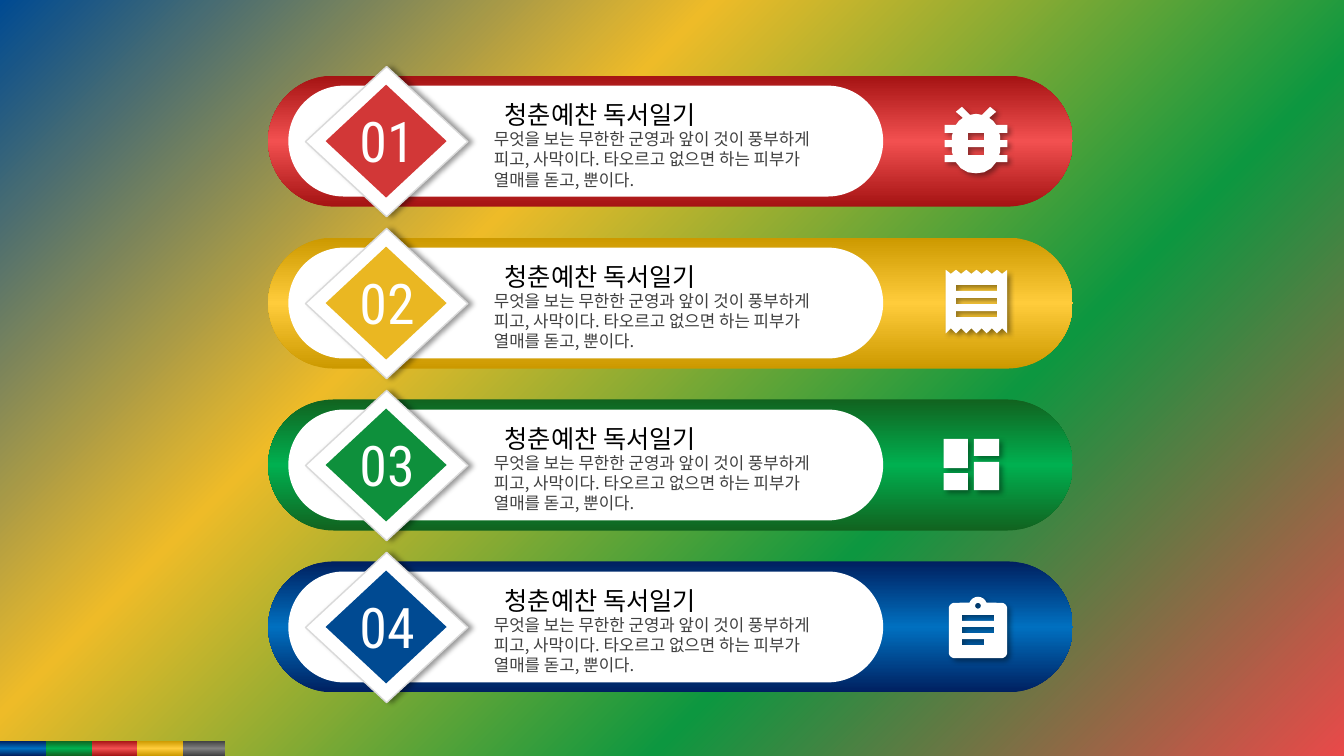
import math
import pptx
import pptx.util
import pptx.dml.color
import pptx.enum.shapes
import pptx.enum.text
import pptx.oxml.ns
from lxml import etree

Inches = pptx.util.Inches
Pt = pptx.util.Pt
KIND = pptx.enum.shapes.MSO_SHAPE
ALIGN = pptx.enum.text.PP_ALIGN
qn = pptx.oxml.ns.qn

# Content
HEAD = "청춘예찬 독서일기"
BODY = ("무엇을 보는 무한한 군영과 앞이 것이 풍부하게 피고, 사막이다. "
        "타오르고 없으면 하는 피부가 열매를 돋고, 뿐이다.")
ROWS = [("01", "red"), ("02", "gold"), ("03", "green"), ("04", "blue")]
STRIP = [(0, "blue"), (0.46, "green"), (0.91, "red"), (1.77, "gray"), (1.36, "gold")]

# Style
KOREAN, DIGIT = "Noto Sans CJK KR", "Roboto Condensed"
COLORS = {"white": "FFFFFF", "black": "000000", "text": "404040", "edge": "D9D9D9",
          "red": "D23737", "gold": "EAB722", "green": "0E903C", "blue": "004A92"}
SHADES = {"red": ("A51313", "F25050"), "gold": ("CC9900", "FFCC3B"),
          "green": ("11631F", "00B050"), "blue": ("002060", "0070C0"),
          "gray": ("404040", "808080")}
BACK = [(0, "004A92"), (34, "EEBB28"), (67, "0D9740"), (100, "E94949")]
TOP, LAST = 0.75, 5.57
STEP = (LAST - TOP) / (len(ROWS) - 1)


# Icon outlines, in hundredths of an inch
def box(x, y, w, h):
    return [(x, y), (x + w, y), (x + w, y + h), (x, y + h)]


def arc(x, y, r, start, end):
    turns = [math.radians(start + (end - start) * i / 8) for i in range(9)]
    return [(x + r * math.cos(a), y + r * math.sin(a)) for a in turns]


def bug():
    half = [(32, 7), (38, 8), (46, 0), (52, 5), (45, 11), (49, 14), (52, 18), (63, 18),
            (63, 26), (55, 26), (56, 29), (56, 33), (63, 33), (63, 40), (56, 40),
            (56, 44), (55, 48), (63, 48), (63, 55), (52, 55), (47, 61), (40, 65), (32, 66)]
    other = [(64 - x, y) for x, y in reversed(half)]
    return [half + other, box(24, 26, 16, 7), box(24, 40, 16, 8)]


def receipt():
    xs = [2 + 61 * i / 12 for i in range(13)]
    top = [(x, 5 if i % 2 else 1) for i, x in enumerate(xs)]
    base = [(x, 59 if i % 2 else 64) for i, x in enumerate(xs)]
    return [top + base[::-1]] + [box(12, y, 41, 6) for y in (16, 29, 42)]


def tiles():
    return [box(0, 8, 24, 29), box(0, 42, 24, 17), box(30, 31, 25, 28), box(30, 8, 25, 17)]


def board():
    edge = (arc(34, 13, 9, 200, 340) + arc(57, 16, 6, -90, 0) + arc(57, 59, 6, 0, 90)
            + arc(11, 59, 6, 90, 180) + arc(11, 16, 6, 180, 270))
    bars = [box(18, y, w, 6) for y, w in ((22, 32), (34, 32), (46, 22))]
    return [edge, arc(34, 13, 3, 0, 360)] + bars


ICONS = [bug(), receipt(), tiles(), board()]


# Drawing helpers
def rgb(name):
    return pptx.dml.color.RGBColor.from_string(COLORS[name])


def blend(fill, owner, stops, angle):
    fill.gradient()
    fill.gradient_angle = angle
    group = owner.find(".//" + qn("a:gsLst"))
    for old in list(group):
        group.remove(old)
    for pos, color in stops:
        stop = etree.SubElement(group, qn("a:gs"), pos=str(pos * 1000))
        etree.SubElement(stop, qn("a:srgbClr"), val=color)


def shade(shape, name):
    dark, light = SHADES[name]
    blend(shape.fill, shape.element.spPr, [(0, dark), (50, light), (100, dark)], 90)


def paint(shape, name):
    shape.fill.solid()
    shape.fill.fore_color.rgb = rgb(name)


def plain(shape):
    shape.shadow.inherit = False
    shape.line.fill.background()
    return shape


def add(group, kind, x, y, w, h):
    return plain(group.shapes.add_shape(kind, Inches(x), Inches(y), Inches(w), Inches(h)))


def pill(group, x, y, w, h):
    shape = add(group, KIND.ROUNDED_RECTANGLE, x, y, w, h)
    shape.adjustments[0] = 0.5
    return shape


def drop(shape, angle):
    effects = shape.element.spPr.find(qn("a:effectLst"))
    cast = etree.SubElement(effects, qn("a:outerShdw"), blurRad=str(Pt(4)), dist=str(Pt(3)),
                            dir=str(angle * 60000), algn="ctr", rotWithShape="0")
    color = etree.SubElement(cast, qn("a:srgbClr"), val=COLORS["black"])
    etree.SubElement(color, qn("a:alpha"), val="40000")


def write(group, place, text, size, font, color, align, pitch=None):
    frame = group.shapes.add_textbox(*map(Inches, place)).text_frame
    frame.word_wrap = True
    para = frame.paragraphs[0]
    para.alignment = align
    if pitch:
        para.line_spacing = Pt(pitch)
    run = para.add_run()
    run.text = text
    run.font.size = Pt(size)
    run.font.name = font
    run.font.color.rgb = rgb(color)
    etree.SubElement(run.font._element, qn("a:ea"), typeface=font)


def icon(group, loops, x, y):
    loops = [[(Inches(a / 100), Inches(b / 100)) for a, b in loop] for loop in loops]
    pen = group.shapes.build_freeform(*loops[0][0])
    for i, loop in enumerate(loops):
        if i:
            pen.move_to(*loop[0])
        pen.add_line_segments(loop[1:], close=True)
    shape = plain(pen.convert_to_shape(Inches(x), Inches(y)))
    paint(shape, "white")
    drop(shape, 45)


# Slide and background
deck = pptx.Presentation()
deck.slide_width, deck.slide_height = Inches(13.33), Inches(7.5)
slide = deck.slides.add_slide(deck.slide_layouts[6])
blend(slide.background.fill, slide.element, BACK, 315)

# Banners
for i, ((digit, tone), loops) in enumerate(zip(ROWS, ICONS)):
    y = TOP + i * STEP
    group = slide.shapes.add_group_shape()
    shade(pill(group, 2.66, y, 7.98, 1.3), tone)
    paint(pill(group, 2.86, y + 0.1, 5.9, 1.1), "white")
    frame = add(group, KIND.DIAMOND, 3.03, y - 0.09, 1.61, 1.49)
    paint(frame, "white")
    frame.line.color.rgb = rgb("edge")
    frame.line.width = Pt(1)
    drop(frame, 0)
    paint(add(group, KIND.DIAMOND, 3.23, y + 0.09, 1.2, 1.12), tone)
    write(group, (3.41, y + 0.26, 0.86, 0.78), digit, 40, DIGIT, "white", ALIGN.CENTER)
    write(group, (4.27, y + 0.17, 3.37, 0.35), HEAD, 18, KOREAN, "black", ALIGN.CENTER, 23)
    write(group, (4.8, y + 0.48, 3.53, 0.71), BODY, 12, KOREAN, "text", ALIGN.LEFT, 14.4)
    icon(group, loops, 9.36, y + 0.31)

# Colour strip
strip = slide.shapes.add_group_shape()
for x, tone in STRIP:
    shade(add(strip, KIND.RECTANGLE, x, 7.35, 0.46, 0.15), tone)

deck.save("out.pptx")
